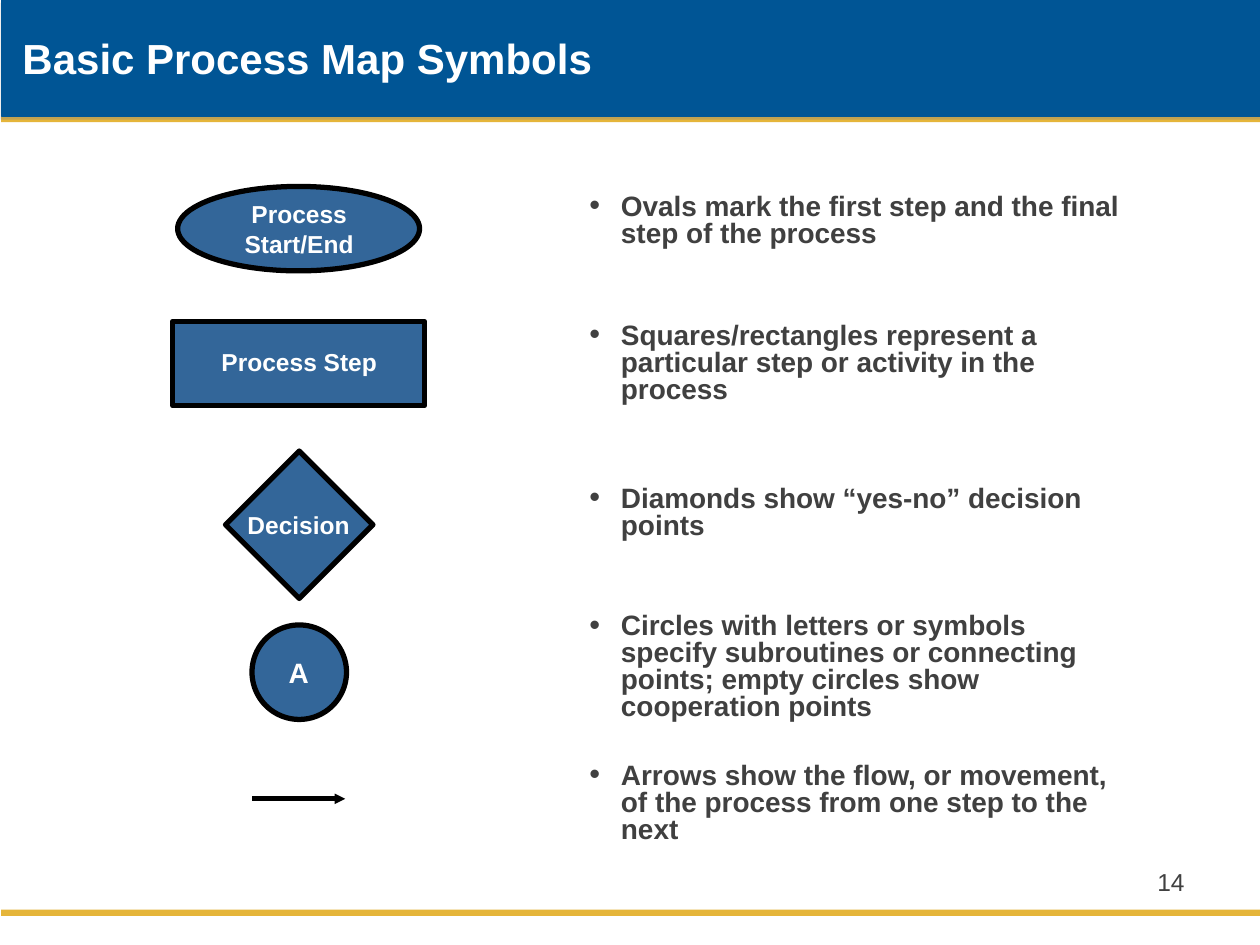
from lxml import etree
from pptx import Presentation
from pptx.dml.color import RGBColor
from pptx.enum.shapes import MSO_CONNECTOR, MSO_SHAPE as SHAPE
from pptx.enum.text import MSO_ANCHOR as ANCHOR, PP_ALIGN as ALIGN
from pptx.oxml.ns import qn
from pptx.util import Inches, Pt

COLORS = {"blue": "005595", "gold": "E5B53A", "symbol": "336699", "black": "000000",
          "white": "FFFFFF", "text": "404040", "shadow": "808080"}
FONT = "Arial"

# kind, box, label, label box, label size
SYMBOLS = [
    (SHAPE.OVAL, (1.41, 1.48, 1.92, 0.67), "Process Start/End", (1.46, 1.53, 1.83, 0.57), 14),
    (SHAPE.RECTANGLE, (1.37, 2.55, 2, 0.67), "Process Step", (1.5, 2.71, 1.75, 0.33), 14),
    (SHAPE.DIAMOND, (1.79, 3.58, 1.17, 1.17), "Decision", (1.83, 4, 1.08, 0.33), 14),
    (SHAPE.OVAL, (2, 4.96, 0.75, 0.75), "A", (2.16, 5.15, 0.42, 0.37), 16),
]

# description, space before in points
DESCRIPTIONS = [
    ("Ovals mark the first step and the final step of the process", 0),
    ("Squares/rectangles represent a particular step or activity in the process", 43),
    ("Diamonds show “yes-no” decision points", 47),
    ("Circles with letters or symbols specify subroutines or connecting points; "
     "empty circles show cooperation points", 42),
    ("Arrows show the flow, or movement, of the process from one step to the next", 24),
]


def rgb(name):
    return RGBColor.from_string(COLORS[name])


def inches(box):
    return [Inches(v) for v in box]


def sub(parent, tag, **attrs):
    return etree.SubElement(parent, qn(tag), attrs)


def write(p, text, size=16, color="text", bold=True, align=ALIGN.LEFT):
    p.alignment = align
    r = p.add_run()
    r.text = text
    r.font.name, r.font.size, r.font.bold = FONT, Pt(size), bold
    r.font.color.rgb = rgb(color)


def add_text_frame(shapes, box, anchor=ANCHOR.TOP):
    tf = shapes.add_textbox(*inches(box)).text_frame
    tf.word_wrap = True
    tf.vertical_anchor = anchor
    return tf


def add_filled(shapes, kind, box, fill, line=None, width=3):
    sp = shapes.add_shape(kind, *inches(box))
    sp.shadow.inherit = False
    sp.fill.solid()
    sp.fill.fore_color.rgb = rgb(fill)
    if line:
        sp.line.color.rgb = rgb(line)
        sp.line.width = Pt(width)
    else:
        sp.line.fill.background()
    return sp


def add_bullet(p):
    pPr = p._p.get_or_add_pPr()
    pPr.set("marL", str(Inches(0.25)))
    pPr.set("indent", str(Inches(-0.25)))
    sub(sub(pPr, "a:buClr"), "a:srgbClr", val=COLORS["text"])
    sub(pPr, "a:buSzPct", val="110000")
    sub(pPr, "a:buFont", typeface=FONT)
    sub(pPr, "a:buChar", char="•")


def add_header(slide, x, y, w, h):
    # Gold rule below a blue band that casts a short shadow on it
    add_filled(slide.shapes, SHAPE.RECTANGLE, (x, y + h, w, 0.05), "gold")
    band = add_filled(slide.shapes, SHAPE.RECTANGLE, (x, y, w, h), "blue", "blue", 0.75)
    effects = band._element.spPr.find(qn("a:effectLst"))
    shadow = sub(effects, "a:outerShdw", dist=str(Pt(1.8)), dir="5400000",
                 algn="t", rotWithShape="0")
    sub(sub(shadow, "a:srgbClr", val=COLORS["shadow"]), "a:alpha", val="35000")
    tf = add_text_frame(slide.shapes, (x + 0.07, y, 7.92, h), ANCHOR.MIDDLE)
    write(tf.paragraphs[0], "Basic Process Map Symbols", size=24, color="white")


def add_footer(slide, x, y, w):
    add_filled(slide.shapes, SHAPE.RECTANGLE, (x, y, w, 0.05), "gold")
    tf = add_text_frame(slide.shapes, (x + 7.16, y - 0.39, 2.33, 0.52))
    write(tf.paragraphs[0], "14", size=14, bold=False, align=ALIGN.RIGHT)


def add_symbol(slide, kind, box, label, label_box, size):
    group = slide.shapes.add_group_shape()
    add_filled(group.shapes, kind, box, "symbol", "black")
    tf = add_text_frame(group.shapes, label_box, ANCHOR.MIDDLE)
    write(tf.paragraphs[0], label, size=size, color="white", align=ALIGN.CENTER)


def add_arrow(slide, x, y, w):
    line = slide.shapes.add_connector(MSO_CONNECTOR.STRAIGHT, *inches((x, y, x + w, y)))
    line.line.color.rgb = rgb("black")
    line.line.width = Pt(3)
    sub(line.line._get_or_add_ln(), "a:tailEnd", type="triangle", w="sm", len="sm")
    sub(line._element.spPr, "a:effectLst")


def add_descriptions(slide, box):
    tf = add_text_frame(slide.shapes, box)
    for i, (text, gap) in enumerate(DESCRIPTIONS):
        p = tf.add_paragraph() if i else tf.paragraphs[0]
        add_bullet(p)
        p.line_spacing = 0.8
        p.space_before = Pt(gap)
        write(p, text)


def main():
    prs = Presentation()
    prs.slide_width, prs.slide_height = Inches(10), Inches(7.5)
    slide = prs.slides.add_slide(prs.slide_layouts[6])
    add_footer(slide, 0.01, 7.22, 10)
    add_header(slide, 0.01, 0, 10, 0.92)
    for symbol in SYMBOLS:
        add_symbol(slide, *symbol)
    add_arrow(slide, 2, 6.34, 0.74)
    add_descriptions(slide, (4.58, 1.5, 4.42, 4.95))
    prs.save("out.pptx")


if __name__ == "__main__":
    main()
